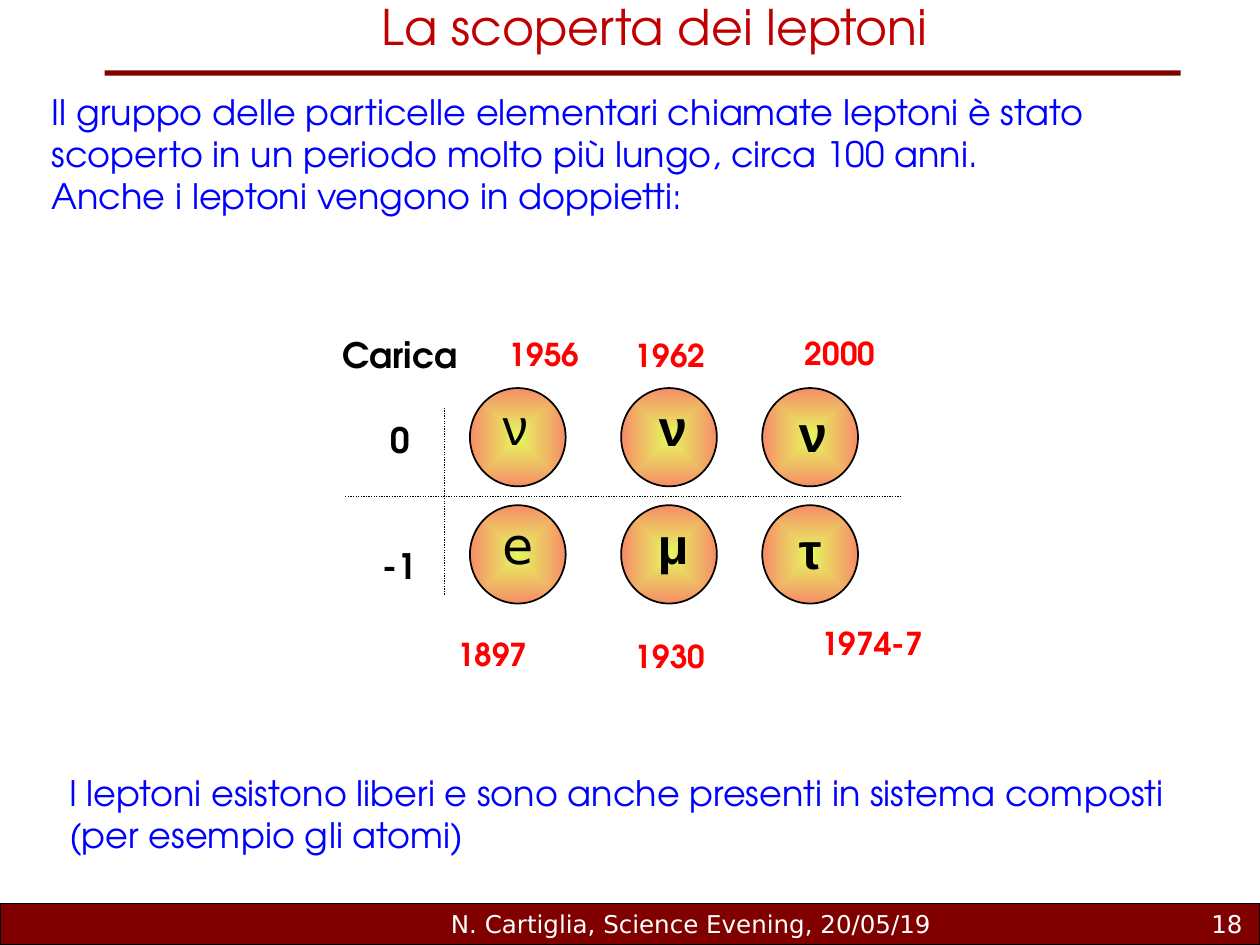
from lxml import etree
from pptx import Presentation
from pptx.dml.color import RGBColor
from pptx.enum.dml import MSO_LINE
from pptx.enum.shapes import MSO_CONNECTOR, MSO_SHAPE
from pptx.enum.text import MSO_ANCHOR, MSO_AUTO_SIZE, PP_ALIGN
from pptx.oxml.ns import qn
from pptx.util import Inches, Pt

LEFT, CENTER, RIGHT = PP_ALIGN.LEFT, PP_ALIGN.CENTER, PP_ALIGN.RIGHT
TOP, MIDDLE = MSO_ANCHOR.TOP, MSO_ANCHOR.MIDDLE
NO_FIT = MSO_AUTO_SIZE.NONE
DOTTED = MSO_LINE.ROUND_DOT
RECTANGLE, OVAL = MSO_SHAPE.RECTANGLE, MSO_SHAPE.OVAL
STRAIGHT = MSO_CONNECTOR.STRAIGHT

HEADING, SYMBOL, PLAIN = "TeX Gyre Adventor", "Arial", "DejaVu Sans"
MAROON, BLUE, RED, BLACK, WHITE = "800000", "0000FF", "FF0000", "000000", "FFFFFF"
GLOW_CENTER, GLOW_EDGE = "E5F75F", "F68D68"

TITLE = "La scoperta dei leptoni"
INTRO = [
    "Il gruppo delle particelle elementari chiamate leptoni è stato scoperto "
    "in un periodo molto più lungo, circa 100 anni.",
    "Anche i leptoni vengono in doppietti:",
]
CLOSING = ["I leptoni esistono liberi e sono anche presenti in sistema composti "
           "(per esempio gli atomi)"]
FOOTER = "N. Cartiglia, Science Evening, 20/05/19"
PAGE_NUMBER = "18"
CHARGES = ["Carica", "0", "-1"]
CHARGE_GAPS = [0, 24.2, 48.4]

COLUMNS, ROWS = [3.73, 4.93, 6.05], [3.08, 4.01]
DIAMETERS = (0.76, 0.78)
PARTICLES = [
    {"cell": (0, 0), "text": "ν", "at": (3.9, 3.08), "width": 0.47, "bold": False},
    {"cell": (0, 1), "text": "e", "at": (3.9, 4.03), "width": 0.43, "bold": False, "font": PLAIN},
    {"cell": (1, 0), "text": "ν", "at": (5.14, 3.09), "width": 0.4},
    {"cell": (1, 1), "text": "μ", "at": (5.13, 4.03), "width": 0.42},
    {"cell": (2, 0), "text": "ν", "at": (6.25, 3.14), "width": 0.4},
    {"cell": (2, 1), "text": "τ", "at": (6.25, 4.07), "width": 0.36},
]
YEARS = [
    ("1956", 3.94, 2.61, 0.77), ("1962", 4.94, 2.62, 0.77), ("2000", 6.29, 2.6, 0.77),
    ("1897", 3.53, 4.99, 0.77), ("1930", 4.94, 5.01, 0.77), ("1974-7", 6.42, 4.9, 1.02),
]
AXES = [(2.74, 3.94, 7.15, 3.94), (3.53, 4.72, 3.53, 3.23)]


def color(value):
    return RGBColor.from_string(value)


def place(shape, area):
    shape.left, shape.top, shape.width, shape.height = map(Inches, area)


def write(box, lines, size=20, font=HEADING, ink=BLACK, bold=False, align=LEFT,
          anchor=TOP, wrap=True, inset=0.1, gaps=None):
    frame = box.text_frame
    frame.auto_size = NO_FIT
    frame.word_wrap = wrap
    frame.vertical_anchor = anchor
    frame.margin_left = frame.margin_right = Inches(inset)
    frame.margin_top = frame.margin_bottom = Inches(0.05)
    for index, line in enumerate(lines):
        para = frame.paragraphs[0] if index == 0 else frame.add_paragraph()
        para.alignment = align
        para.space_before = Pt(gaps[index] if gaps else 0)
        span = para.add_run()
        span.text = line
        span.font.size, span.font.name, span.font.bold = Pt(size), font, bold
        span.font.color.rgb = color(ink)


def add_text(page, area, lines, **style):
    box = page.shapes.add_textbox(*map(Inches, area))
    write(box, lines, **style)


def remove_bullets(box):
    for para in box.text_frame.paragraphs:
        properties = para._p.get_or_add_pPr()
        properties.set("marL", "0")
        properties.set("indent", "0")
        etree.SubElement(properties, qn("a:buNone"))


def add_bar(page, area, outlined=False):
    bar = page.shapes.add_shape(RECTANGLE, *map(Inches, area))
    bar.shadow.inherit = False
    bar.fill.solid()
    bar.fill.fore_color.rgb = color(MAROON)
    if outlined:
        bar.line.color.rgb = color(BLACK)
        bar.line.width = Pt(0.75)
    else:
        bar.line.fill.background()


def add_ball(page, area):
    ball = page.shapes.add_shape(OVAL, *map(Inches, area))
    ball.shadow.inherit = False
    ball.line.color.rgb = color(BLACK)
    ball.line.width = Pt(1)
    ball.fill.gradient()
    for stop, ink, position in zip(ball.fill.gradient_stops, (GLOW_CENTER, GLOW_EDGE), (0, 1)):
        stop.color.rgb = color(ink)
        stop.position = position
    gradient = ball._element.spPr.find(qn("a:gradFill"))
    linear = gradient.find(qn("a:lin"))
    radial = etree.Element(qn("a:path"), {"path": "shape"})
    etree.SubElement(radial, qn("a:fillToRect"), {side: "50000" for side in "ltrb"})
    gradient.replace(linear, radial)


def add_axis(page, ends):
    axis = page.shapes.add_connector(STRAIGHT, *map(Inches, ends))
    axis.line.color.rgb = color(BLACK)
    axis.line.width = Pt(0.75)
    axis.line.dash_style = DOTTED
    etree.SubElement(axis._element.spPr, qn("a:effectLst"))


def main():
    deck = Presentation()
    deck.slide_width, deck.slide_height = Inches(10), Inches(7.5)
    page = deck.slides.add_slide(deck.slide_layouts[1])
    title, body = page.placeholders

    add_bar(page, (0, 7.17, 10, 0.33), outlined=True)
    add_bar(page, (0.83, 0.56, 8.54, 0.04))
    footer_style = {"size": 14, "font": PLAIN, "ink": WHITE, "anchor": MIDDLE}
    add_text(page, (3.43, 7.17, 4.11, 0.33), [FOOTER], align=CENTER, **footer_style)
    add_text(page, (7.88, 7.17, 2.08, 0.33), [PAGE_NUMBER], align=RIGHT, **footer_style)

    place(title, (0.45, -0.08, 9.49, 0.57))
    write(title, [TITLE], size=28, ink="C00000", align=CENTER, anchor=MIDDLE)
    place(body, (0.31, 0.67, 8.9, 1.45))
    write(body, INTRO, ink=BLUE)
    remove_bullets(body)

    for particle in PARTICLES:
        column, row = particle["cell"]
        add_ball(page, (COLUMNS[column], ROWS[row], *DIAMETERS))
        add_text(page, (*particle["at"], particle["width"], 0.58), [particle["text"]],
                 size=29, font=particle.get("font", SYMBOL),
                 bold=particle.get("bold", True), wrap=False, inset=0.09)

    for year, left, top, width in YEARS:
        add_text(page, (left, top, width, 0.4), [year], size=18, ink=RED, bold=True, wrap=False)
    add_text(page, (2.61, 2.6, 1.13, 2.12), CHARGES, bold=True, align=CENTER,
             wrap=False, gaps=CHARGE_GAPS)
    for ends in AXES:
        add_axis(page, ends)
    add_text(page, (0.45, 6.07, 8.9, 0.77), CLOSING, ink=BLUE)

    deck.save("out.pptx")


if __name__ == "__main__":
    main()
